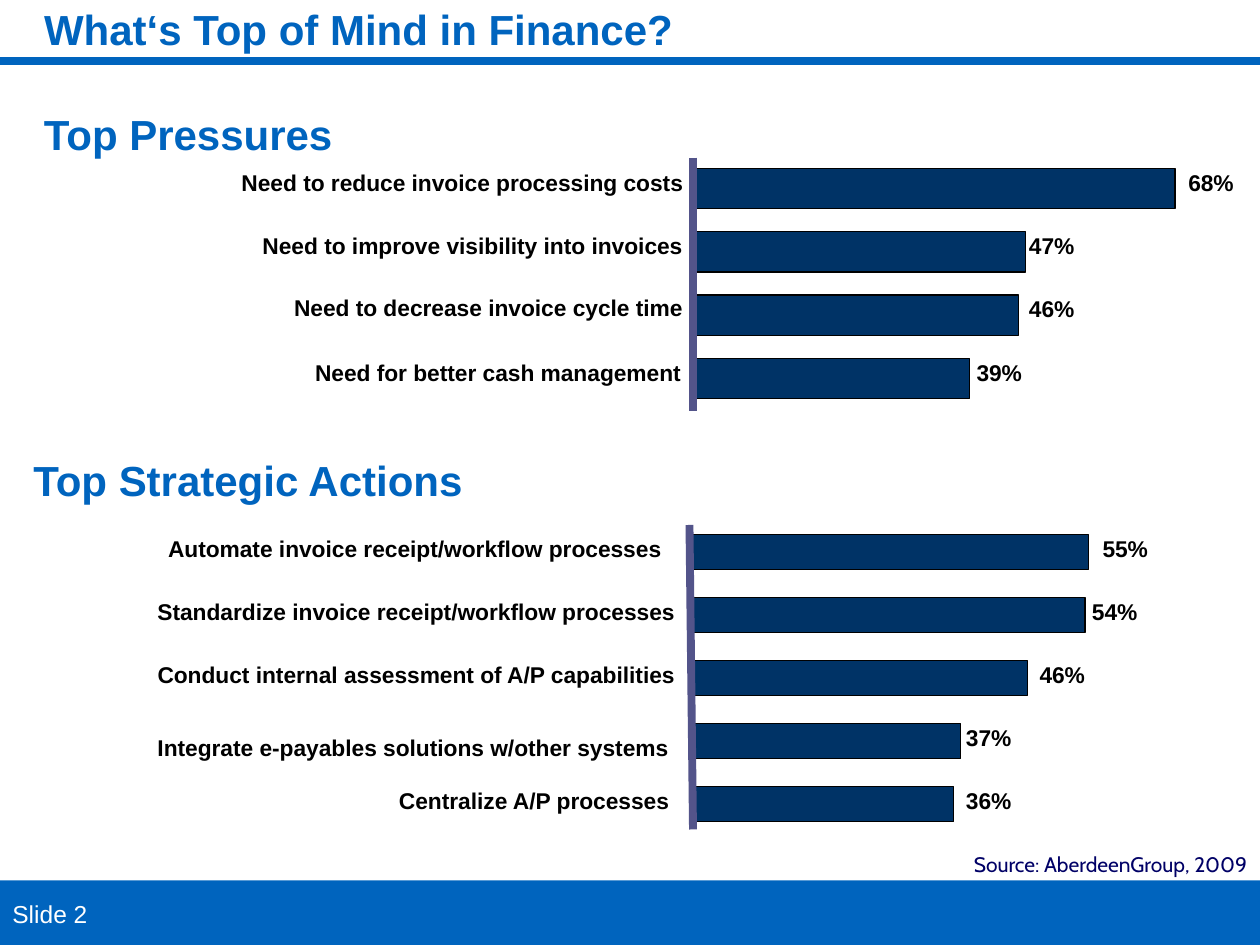
"""Builds the slide on top pressures and strategic actions in finance."""
import pptx
import pptx.dml.color
import pptx.enum.shapes
import pptx.enum.text
import pptx.util
from dataclasses import dataclass
from lxml import etree

Pt = pptx.util.Pt
RGB = pptx.dml.color.RGBColor.from_string
ALIGN = pptx.enum.text.PP_ALIGN
ANCHOR = pptx.enum.text.MSO_ANCHOR
RECT = pptx.enum.shapes.MSO_SHAPE.RECTANGLE
STRAIGHT = pptx.enum.shapes.MSO_CONNECTOR.STRAIGHT


@dataclass
class Theme:
    blue: str = "0064BE"
    bar: str = "003366"
    axis: str = "53548A"
    black: str = "000000"
    white: str = "FFFFFF"
    citation: str = "000066"
    font: str = "Arial"
    source_font: str = "Cabin"
    heading: int = 24
    label: int = 13
    source: int = 12
    footer: int = 14


theme = Theme()


def write(sp, box, text, color, size, font=theme.font, bold=True, insets=(0, 0, 0, 0),
          anchor=ANCHOR.TOP, align=ALIGN.LEFT, spacing=None, wrap=True):
    sp.left, sp.top, sp.width, sp.height = map(Pt, box)
    tf = sp.text_frame
    tf.word_wrap = wrap
    tf.auto_size = pptx.enum.text.MSO_AUTO_SIZE.NONE
    tf.vertical_anchor = anchor
    tf.margin_left, tf.margin_top, tf.margin_right, tf.margin_bottom = map(Pt, insets)
    p = tf.paragraphs[0]
    p.alignment = align
    p.line_spacing = spacing
    p.space_before = Pt(0)
    r = p.add_run()
    r.text = text
    r.font.name = font
    r.font.size = Pt(size)
    r.font.bold = bold
    r.font.color.rgb = RGB(color)


def line(s, x1, y1, x2, y2, color):
    sp = s.shapes.add_connector(STRAIGHT, Pt(x1), Pt(y1), Pt(x2), Pt(y2))
    sp.line.color.rgb = RGB(color)
    sp.line.width = Pt(4.5)
    etree.SubElement(sp._element.spPr, pptx.oxml.ns.qn("a:effectLst"))


prs = pptx.Presentation()
prs.slide_width, prs.slide_height = Pt(720), Pt(540)
s = prs.slides.add_slide(prs.slide_layouts[5])
heading = dict(color=theme.blue, size=theme.heading, insets=(7.2, 3.6, 7.2, 5),
               anchor=ANCHOR.BOTTOM, spacing=0.9)

line(s, 0, 35, 720, 35, theme.blue)
sp = s.shapes.add_shape(RECT, 0, Pt(503), Pt(720), Pt(37))
sp.shadow.inherit = False
sp.fill.solid()
sp.fill.fore_color.rgb = RGB(theme.blue)
sp.line.fill.background()
write(s.shapes.title, (18, 0, 684, 36), "What‘s Top of Mind in Finance?", **heading)

sections = [
    dict(title="Top Pressures", box=(18, 60, 684, 36), top=96.2, step=36.2, height=23,
         axis=(396, 90, 396, 235),
         rows=[("Need to reduce invoice processing costs", 138, 256, 0, 396, 275.5, "68%", 679),
               ("Need to improve visibility into invoices", 150, 244, 0, 396, 190, "47%", 588),
               ("Need to decrease invoice cycle time", 168, 234, -1, 396, 186, "46%", 588),
               ("Need for better cash management", 180, 212, 0, 396, 158, "39%", 558)]),
    dict(title="Top Strategic Actions", box=(12, 258, 684, 36), top=305.5, step=36, height=20,
         axis=(394, 300, 396, 474),
         rows=[("Automate invoice receipt/workflow processes", 96, 292, 0, 394, 228, "55%", 630),
               ("Standardize invoice receipt/workflow processes", 90, 304, 0, 396, 224, "54%", 624),
               ("Conduct internal assessment of A/P capabilities", 90, 300, 0, 396, 191, "46%", 594),
               ("Integrate e-payables solutions w/other systems", 90, 297, 6, 396, 153, "37%", 552),
               ("Centralize A/P processes", 228, 156, 0, 396, 149, "36%", 552)]),
]

for section in sections:
    sp = s.shapes.add_textbox(0, 0, 0, 0)
    write(sp, section["box"], section["title"], **heading)
    for i, (label, x, width, shift, bar_x, bar_width, value, value_x) in enumerate(section["rows"]):
        y = section["top"] + i * section["step"]
        sp = s.shapes.add_shape(RECT, Pt(bar_x), Pt(y), Pt(bar_width), Pt(section["height"]))
        sp.shadow.inherit = False
        sp.fill.solid()
        sp.fill.fore_color.rgb = RGB(theme.bar)
        sp.line.color.rgb = RGB(theme.black)
        sp.line.width = Pt(0)
        for text, box in [(label, (x, y + shift, width, 16)), (value, (value_x, y, 40, 16))]:
            sp = s.shapes.add_textbox(0, 0, 0, 0)
            write(sp, box, text, theme.black, theme.label, wrap=False)
    line(s, *section["axis"], theme.axis)

sp = s.shapes.add_textbox(0, 0, 0, 0)
write(sp, (354, 486, 366, 19), "Source: AberdeenGroup, 2009", theme.citation, theme.source,
      font=theme.source_font, bold=False, insets=(7.2, 3.6, 7.2, 3.6), align=ALIGN.RIGHT, spacing=0.8)
sp = s.shapes.add_textbox(0, 0, 0, 0)
write(sp, (0, 510, 60, 24), "Slide 2", theme.white, theme.footer, bold=False,
      insets=(7.2, 3.6, 7.2, 3.6), wrap=False)

prs.save("out.pptx")
